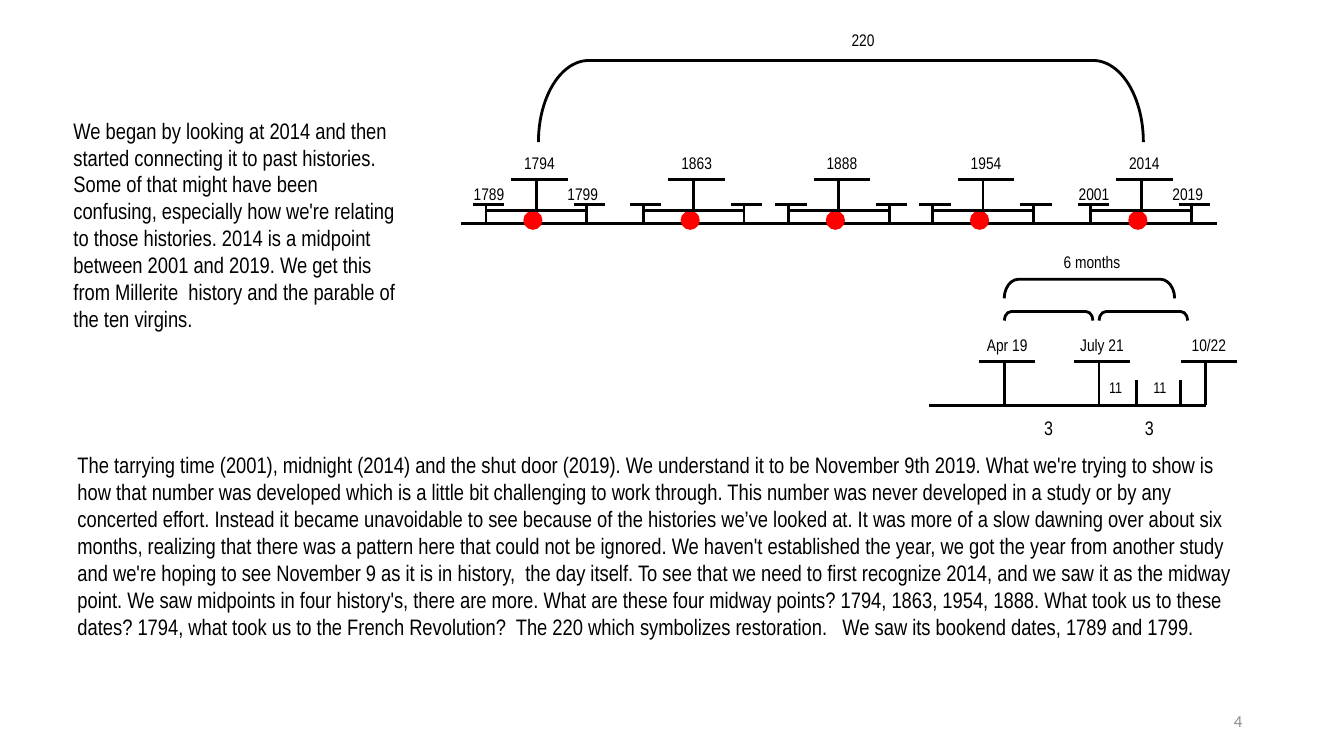
from pptx import Presentation
from pptx.dml.color import RGBColor
from pptx.enum.shapes import MSO_CONNECTOR, MSO_SHAPE
from pptx.enum.text import MSO_ANCHOR, MSO_AUTO_SIZE, PP_ALIGN
from pptx.oxml import parse_xml
from pptx.util import Pt

BLACK = RGBColor(0x00, 0x00, 0x00)
RED = RGBColor(0xFF, 0x00, 0x00)
GRAY = RGBColor(0x8C, 0x8C, 0x8C)

EMU_PER_PX = 9144
EMPTY_EFFECTS = '<a:effectLst xmlns:a="http://schemas.openxmlformats.org/drawingml/2006/main"/>'

OPENING = (
    "We began by looking at 2014 and then started connecting it to past histories. "
    "Some of that might have been confusing, especially how we're relating to those "
    "histories. 2014 is a midpoint between 2001 and 2019. We get this from Millerite  "
    "history and the parable of the ten virgins."
)
EXPLANATION = [
    "The tarrying time (2001), midnight (2014) and the shut door (2019).",
    "We understand it to be November 9th 2019.",
    "What we're trying to show is how that number was developed which is a little bit "
    "challenging to work through.",
    "This number was never developed in a study or by any concerted effort.",
    "Instead it became unavoidable to see because of the histories we’ve looked at.",
    "It was more of a slow dawning over about six months, realizing that there was a "
    "pattern here that could not be ignored.",
    "We haven't established the year, we got the year from another study and we're "
    "hoping to see November 9 as it is in history,  the day itself.",
    "To see that we need to first recognize 2014, and we saw it as the midway point.",
    "We saw midpoints in four history's, there are more.",
    "What are these four midway points? 1794, 1863, 1954, 1888.",
    "What took us to these dates? 1794, what took us to the French Revolution?  The 220 "
    "which symbolizes restoration.   We saw its bookend dates, 1789 and 1799.",
]
HISTORIES = [
    (532, "1794", ("1789", "1799")),
    (688, "1863", ()),
    (832, "1888", ()),
    (975, "1954", ()),
    (1132, "2014", ("2001", "2019")),
]
SUMMER_DATES = [(996, "Apr 19"), (1090, "July 21"), (1196, "10/22")]


def px(length):
    return round(length * EMU_PER_PX)


class TimelineSlide:
    """Draws timeline parts on one slide, measured in hundredths of an inch."""

    def __init__(self, slide, font="Arial Narrow", line_width=2):
        self.shapes = slide.shapes
        self.font = font
        self.line_width = Pt(line_width)

    def text(self, words, left, top, width, height, size=16, color=BLACK,
             font=None, align=PP_ALIGN.LEFT):
        box = self.shapes.add_textbox(px(left), px(top), px(width), px(height))
        frame = box.text_frame
        frame.word_wrap = True
        frame.text = words
        paragraph = frame.paragraphs[0]
        paragraph.alignment = align
        style = paragraph.runs[0].font
        style.name = font or self.font
        style.size = Pt(size)
        style.color.rgb = color
        return frame

    def passage(self, words, left, top, width, height):
        frame = self.text(words, left, top, width, height)
        frame.auto_size = MSO_AUTO_SIZE.SHAPE_TO_FIT_TEXT

    def label(self, words, left, top, width=56, height=31, size=12):
        frame = self.text(words, left, top, width, height, size, align=PP_ALIGN.CENTER)
        frame.margin_left = frame.margin_right = px(4)
        frame.margin_top = frame.margin_bottom = px(4)

    def line(self, x1, y1, x2, y2):
        stroke = self.shapes.add_connector(
            MSO_CONNECTOR.STRAIGHT, px(x1), px(y1), px(x2), px(y2))
        stroke.line.color.rgb = BLACK
        stroke.line.width = self.line_width
        stroke._element.spPr.append(parse_xml(EMPTY_EFFECTS))

    def bracket(self, left, top, width, height, bend):
        brace = self.shapes.add_shape(
            MSO_SHAPE.LEFT_BRACKET,
            px(left + (width - height) / 2), px(top + (height - width) / 2),
            px(height), px(width))
        brace.rotation = 90
        brace.adjustments[0] = bend
        brace.shadow.inherit = False
        brace.fill.background()
        brace.line.color.rgb = BLACK
        brace.line.width = self.line_width

    def dot(self, left, top, size=19):
        midpoint = self.shapes.add_shape(
            MSO_SHAPE.OVAL, px(left), px(top), px(size), px(size))
        midpoint.shadow.inherit = False
        midpoint.fill.solid()
        midpoint.fill.fore_color.rgb = RED
        midpoint.line.fill.background()

    def marker(self, x, cap, base, date):
        self.line(x, cap, x, base)
        self.line(x - 25, cap, x + 31, cap)
        self.label(date, x - 25, cap - 31)

    def history(self, x, date, bookends, base=222):
        self.marker(x, base - 44, base, date)
        for side, cap_left in ((x - 50, x - 63), (x + 50, x + 37)):
            self.line(side, base - 19, side, base)
            self.line(cap_left, base - 19, cap_left + 31, base - 19)
        for bookend, label_left in zip(bookends, (x - 75, x + 18)):
            self.label(bookend, label_left, base - 44, height=25)
        self.dot(x - 13, base - 13)
        self.line(x - 50, base - 13, x + 50, base - 13)


def main():
    deck = Presentation()
    deck.slide_width, deck.slide_height = px(1333), px(750)
    timeline = TimelineSlide(deck.slides.add_slide(deck.slide_layouts[6]))

    page_number = timeline.text("4", 942, 695, 300, 40, 12, GRAY, "Calibri", PP_ALIGN.RIGHT)
    page_number.vertical_anchor = MSO_ANCHOR.MIDDLE

    timeline.line(457, 222, 1207, 222)
    for x, date, bookends in HISTORIES:
        timeline.history(x, date, bookends)
    timeline.bracket(534, 60, 600, 81, 0.615)
    timeline.label("220", 828, 25)

    timeline.passage(" ".join(EXPLANATION), 67, 443, 1172, 199)
    timeline.passage(OPENING, 63, 111, 348, 226)

    timeline.line(921, 402, 1196, 402)
    for x, date in SUMMER_DATES:
        timeline.marker(x, 359, 402, date)
    for tick in (1127, 1171):
        timeline.line(tick, 377, tick, 402)
    for left in (1090, 1134):
        timeline.label("11", left, 371, 33, 25, 11)
    for left in (1021, 1121):
        timeline.label("3", left, 409, 38, size=14)
    for left in (996, 1090):
        timeline.bracket(left, 309, 88, 9, 0.778)
    timeline.bracket(996, 277, 169, 19, 0.75)
    timeline.label("6 months", 1027, 246, 112)

    deck.save("out.pptx")


if __name__ == "__main__":
    main()
